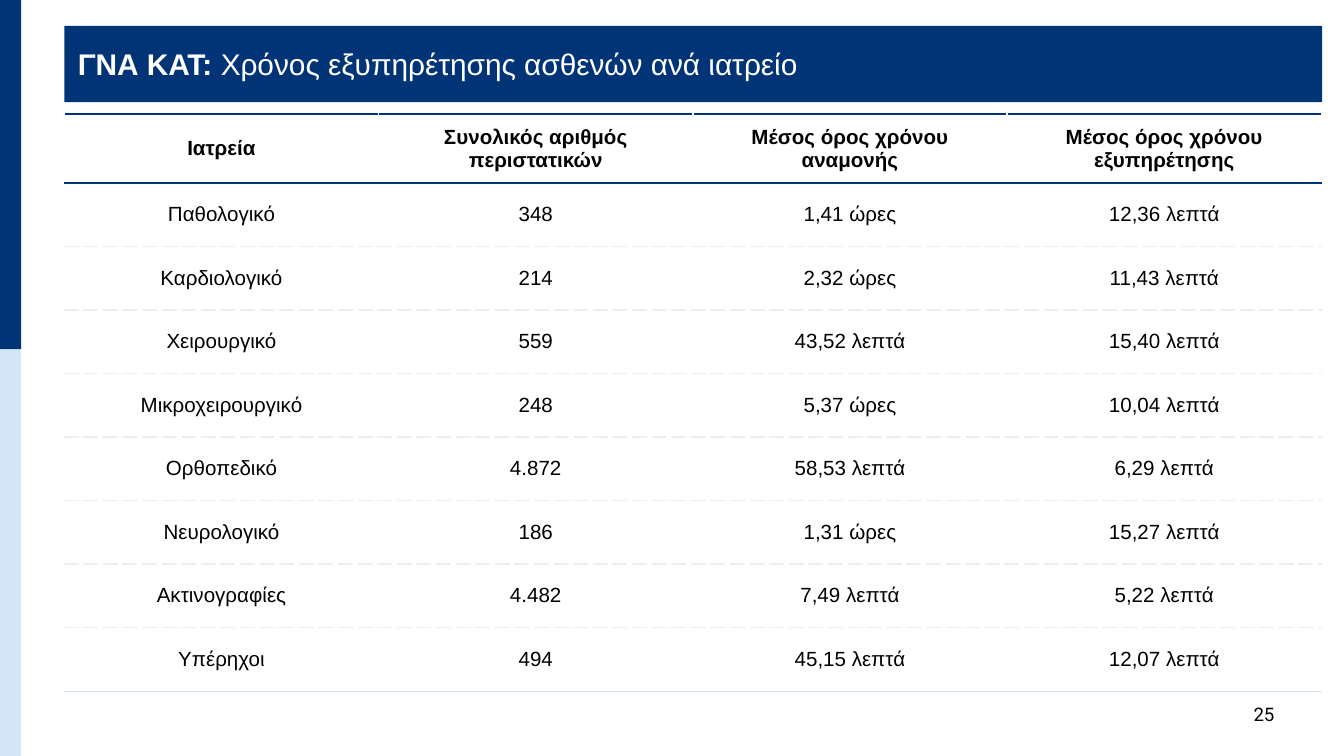
from typing import NamedTuple, Optional

from lxml.etree import SubElement
from pptx import Presentation
from pptx.dml.color import RGBColor
from pptx.enum.shapes import MSO_SHAPE as Shape
from pptx.enum.text import MSO_ANCHOR as Anchor, MSO_AUTO_SIZE as AutoSize, PP_ALIGN as Align
from pptx.oxml.ns import qn
from pptx.util import Pt

NAVY, PALE_BLUE, GREY = "013476", "D3E5F6", "EEEEEE"
WHITE, BLACK = "FFFFFF", "000000"
LEFT, WIDTH = 34.5, 673.5
HEADER_HEIGHT, ROW_HEIGHT = 36.9, 34.02


class Band(NamedTuple):
    top: float
    height: float
    color: str


class Border(NamedTuple):
    color: str
    width: float
    dash: Optional[str] = None


class Clinic(NamedTuple):
    name: str
    cases: str
    waiting: str
    service: str


SIDE_BANDS = [Band(0, 187.2, NAVY), Band(187.2, 217.8, PALE_BLUE)]

# Each heading is a list of lines.
HEADINGS = [
    ["Ιατρεία"],
    ["Συνολικός αριθμός", "περιστατικών"],
    ["Μέσος όρος χρόνου", "αναμονής"],
    ["Μέσος όρος χρόνου", "εξυπηρέτησης"],
]

CLINICS = [
    Clinic("Παθολογικό", "348", "1,41 ώρες", "12,36 λεπτά"),
    Clinic("Καρδιολογικό", "214", "2,32 ώρες", "11,43 λεπτά"),
    Clinic("Χειρουργικό", "559", "43,52 λεπτά", "15,40 λεπτά"),
    Clinic("Μικροχειρουργικό", "248", "5,37 ώρες", "10,04 λεπτά"),
    Clinic("Ορθοπεδικό", "4.872", "58,53 λεπτά", "6,29 λεπτά"),
    Clinic("Νευρολογικό", "186", "1,31 ώρες", "15,27 λεπτά"),
    Clinic("Ακτινογραφίες", "4.482", "7,49 λεπτά", "5,22 λεπτά"),
    Clinic("Υπέρηχοι", "494", "45,15 λεπτά", "12,07 λεπτά"),
]

SIDE_EDGE = Border(WHITE, 1)
HEADER_EDGE = Border(NAVY, 1.5)
ROW_EDGE = Border(GREY, 1, "dash")
LAST_EDGE = Border(PALE_BLUE, 0.25)


def set_color(target, color: str) -> None:
    """Colour a fill (made solid) or a font."""
    if hasattr(target, "solid"):
        target.solid()
        target.fore_color.rgb = RGBColor.from_string(color)
    else:
        target.color.rgb = RGBColor.from_string(color)


def add_run(paragraph, text: str, size: float, color: str,
            bold: bool = False, font: str = "Arial") -> None:
    run = paragraph.add_run()
    run.text = text
    run.font.name, run.font.size, run.font.bold = font, Pt(size), bold
    set_color(run.font, color)


def set_frame(frame) -> None:
    frame.word_wrap = True
    frame.auto_size = AutoSize.NONE
    frame.vertical_anchor = Anchor.MIDDLE
    frame.margin_left = frame.margin_right = Pt(7.2)
    frame.margin_top = frame.margin_bottom = Pt(7.2)


def add_band(slide, band: Band) -> None:
    bar = slide.shapes.add_shape(Shape.RECTANGLE, 0, Pt(band.top), Pt(11.3), Pt(band.height))
    bar.shadow.inherit = False
    set_color(bar.fill, band.color)
    bar.line.fill.background()


def set_borders(cell, top: Border, bottom: Border) -> None:
    properties = cell._tc.get_or_add_tcPr()
    edges = {"a:lnL": SIDE_EDGE, "a:lnR": SIDE_EDGE, "a:lnT": top, "a:lnB": bottom}
    for position, (tag, edge) in enumerate(edges.items()):
        line = SubElement(properties, qn(tag), w=str(Pt(edge.width)))
        properties.insert(position, line)
        fill = SubElement(line, qn("a:solidFill"))
        SubElement(fill, qn("a:srgbClr"), val=edge.color)
        SubElement(line, qn("a:prstDash"), val=edge.dash or "solid")


def fill_cell(cell, lines: list[str], bold: bool, top: Border, bottom: Border) -> None:
    set_color(cell.fill, WHITE)
    set_borders(cell, top, bottom)
    cell.vertical_anchor = Anchor.MIDDLE
    cell.margin_left = cell.margin_right = Pt(5)
    cell.margin_top = cell.margin_bottom = Pt(2.9)
    paragraph = cell.text_frame.paragraphs[0]
    paragraph.alignment = Align.CENTER
    for number, line in enumerate(lines):
        if number:
            paragraph.add_line_break()
        add_run(paragraph, line, 11, BLACK, bold)


def add_clinic_table(slide) -> None:
    rows = [HEADINGS] + [[[value] for value in clinic] for clinic in CLINICS]
    edges = [HEADER_EDGE] * 2 + [ROW_EDGE] * (len(CLINICS) - 1) + [LAST_EDGE]
    height = HEADER_HEIGHT + ROW_HEIGHT * len(CLINICS)
    table = slide.shapes.add_table(len(rows), len(HEADINGS), Pt(LEFT), Pt(61.2),
                                   Pt(WIDTH), Pt(height)).table
    table.first_row = table.horz_banding = False
    for column in table.columns:
        column.width = Pt(WIDTH / len(HEADINGS))
    for r, row in enumerate(rows):
        table.rows[r].height = Pt(ROW_HEIGHT if r else HEADER_HEIGHT)
        for c, lines in enumerate(row):
            fill_cell(table.cell(r, c), lines, r == 0, edges[r], edges[r + 1])


def main() -> None:
    deck = Presentation()
    deck.slide_width, deck.slide_height = Pt(720), Pt(405)
    slide = deck.slides.add_slide(deck.slide_layouts[5])

    for band in SIDE_BANDS:
        add_band(slide, band)

    title = slide.shapes.title
    title.left, title.top, title.width, title.height = Pt(LEFT), Pt(13.9), Pt(673.8), Pt(40.8)
    set_color(title.fill, NAVY)
    set_frame(title.text_frame)
    heading = title.text_frame.paragraphs[0]
    heading.alignment = Align.LEFT
    add_run(heading, "ΓΝΑ ΚΑΤ: ", 16, WHITE, bold=True)
    add_run(heading, "Χρόνος εξυπηρέτησης ασθενών ανά ιατρείο", 16, WHITE)

    add_clinic_table(slide)

    page_number = slide.shapes.add_textbox(Pt(664.5), Pt(372.5), Pt(41), Pt(20.2))
    set_frame(page_number.text_frame)
    add_run(page_number.text_frame.paragraphs[0], "25", 10, BLACK, font="Roboto")

    deck.save("out.pptx")


if __name__ == "__main__":
    main()
